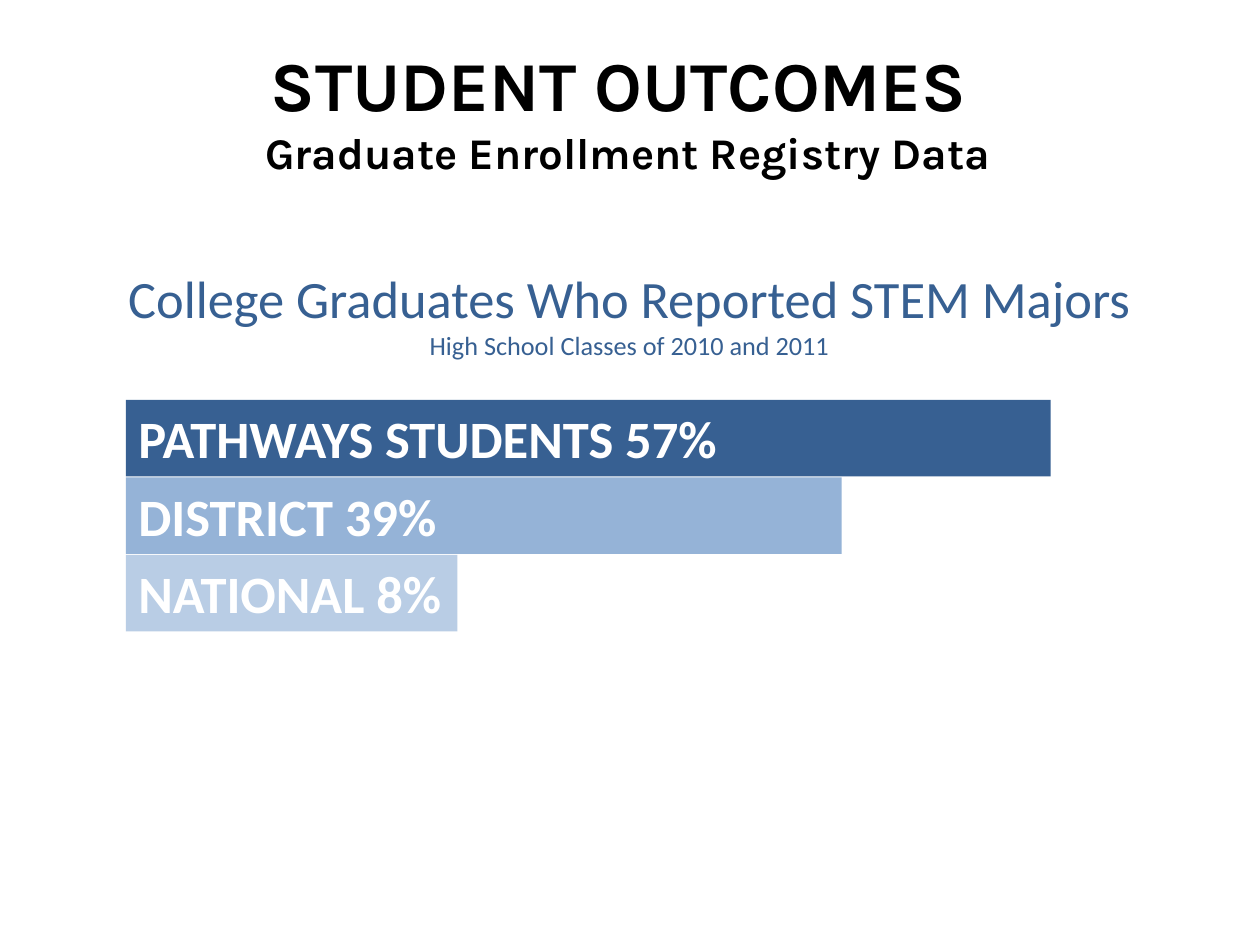
from collections import namedtuple
from dataclasses import dataclass

from pptx import Presentation
from pptx.dml.color import RGBColor
from pptx.enum.shapes import MSO_SHAPE
from pptx.enum.text import MSO_ANCHOR, MSO_AUTO_SIZE, PP_ALIGN
from pptx.util import Cm, Pt

Box = namedtuple("Box", "left top width height")
Bar = namedtuple("Bar", "label width color")


@dataclass(frozen=True)
class Theme:
    heading_font: str = "Karla"
    body_font: str = "Calibri"
    black: str = "000000"
    white: str = "FFFFFF"
    dark_blue: str = "376092"
    mid_blue: str = "95B3D7"
    light_blue: str = "B9CDE5"
    title_size: int = 40
    subtitle_size: int = 25
    large_size: int = 30
    small_size: int = 15


THEME = Theme()

BARS = [
    Bar("PATHWAYS STUDENTS 57%", 18.64, THEME.dark_blue),
    Bar("DISTRICT 39%", 14.43, THEME.mid_blue),
    Bar("NATIONAL 8%", 6.68, THEME.light_blue),
]


def write_lines(frame, lines, font_name, color, bold, align):
    frame.word_wrap = True
    frame.auto_size = MSO_AUTO_SIZE.SHAPE_TO_FIT_TEXT
    for index, (text, size) in enumerate(lines):
        para = frame.add_paragraph() if index else frame.paragraphs[0]
        para.text = text
        para.alignment = align
        para.font.name = font_name
        para.font.size = Pt(size)
        para.font.bold = bold
        para.font.color.rgb = RGBColor.from_string(color)


def add_heading(page, box, lines, font_name, color, bold):
    heading = page.shapes.add_textbox(*map(Cm, box))
    write_lines(heading.text_frame, lines, font_name, color, bold, PP_ALIGN.CENTER)


def add_bars(page, box, bars, gap):
    bar_height = (box.height - gap * (len(bars) - 1)) / len(bars)
    for index, bar in enumerate(bars):
        top = box.top + index * (bar_height + gap)
        shape = page.shapes.add_shape(
            MSO_SHAPE.RECTANGLE, Cm(box.left), Cm(top), Cm(bar.width), Cm(bar_height)
        )
        shape.shadow.inherit = False
        shape.fill.solid()
        shape.fill.fore_color.rgb = RGBColor.from_string(bar.color)
        shape.line.fill.background()
        shape.text_frame.vertical_anchor = MSO_ANCHOR.TOP
        write_lines(
            shape.text_frame, [(bar.label, THEME.large_size)],
            THEME.body_font, THEME.white, True, PP_ALIGN.LEFT,
        )


def main():
    deck = Presentation()
    deck.slide_width, deck.slide_height = Cm(25.4), Cm(19.05)
    page = deck.slides.add_slide(deck.slide_layouts[6])

    add_heading(
        page, Box(1.18, 0.71, 22.94, 3.02),
        [("STUDENT OUTCOMES ", THEME.title_size),
         ("Graduate Enrollment Registry Data", THEME.subtitle_size)],
        THEME.heading_font, THEME.black, True,
    )
    add_heading(
        page, Box(2.02, 5.24, 21.34, 2.18),
        [("College Graduates Who Reported STEM Majors", THEME.large_size),
         ("High School Classes of 2010 and 2011", THEME.small_size)],
        THEME.body_font, THEME.dark_blue, False,
    )
    add_bars(page, Box(2.54, 8.06, 18.64, 4.67), BARS, 0.02)

    deck.save("out.pptx")


if __name__ == "__main__":
    main()
